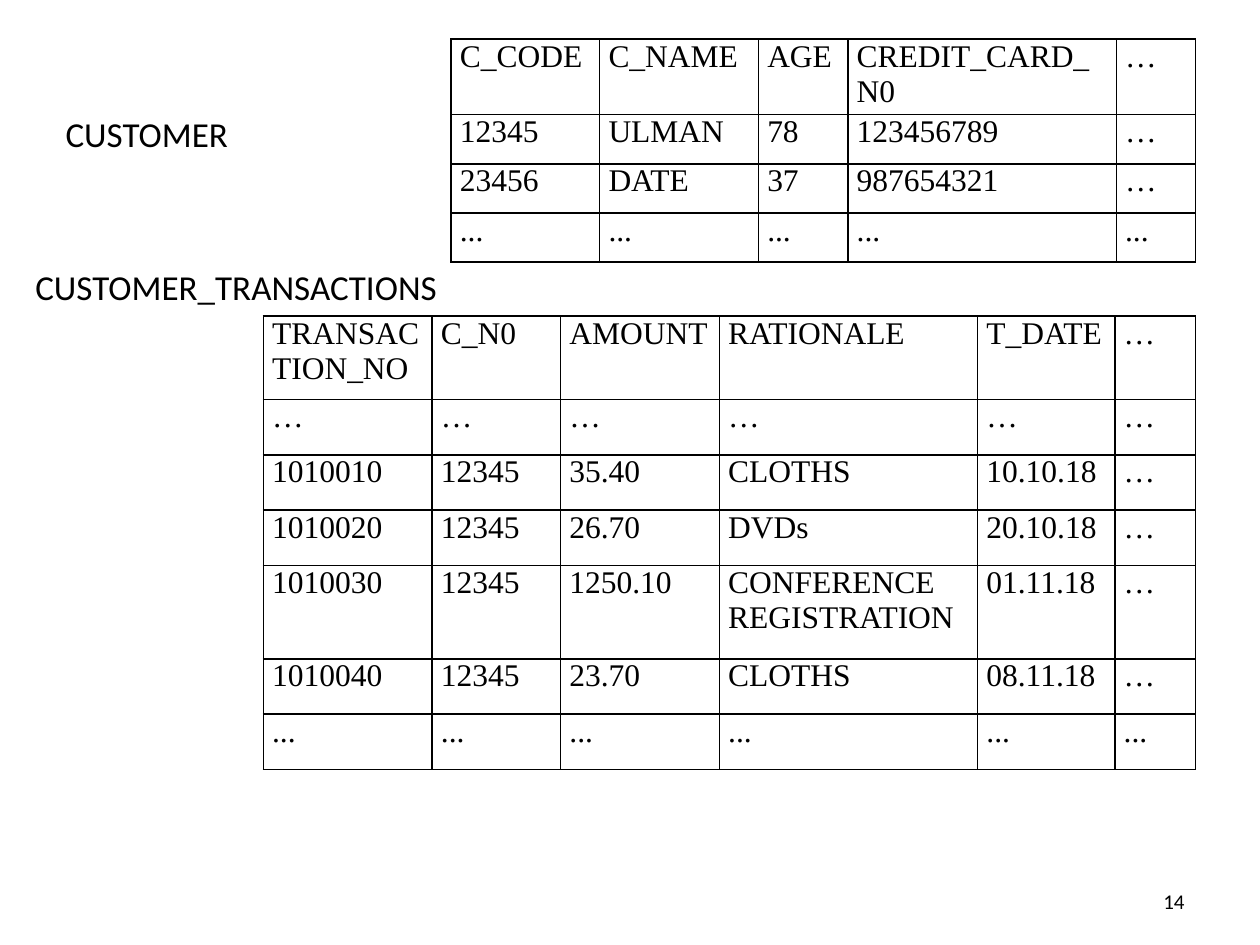
from lxml import etree
from pptx import Presentation
from pptx.dml.color import RGBColor
from pptx.enum.text import MSO_ANCHOR, PP_ALIGN
from pptx.oxml.ns import qn
from pptx.util import Inches, Pt

MIDDLE = MSO_ANCHOR.MIDDLE
LEFT, RIGHT, JUSTIFY = PP_ALIGN.LEFT, PP_ALIGN.RIGHT, PP_ALIGN.JUSTIFY
COLORS = {"text": "000000", "border": "000000"}
BODY, SERIF = "Calibri", "Times New Roman"

CUSTOMERS = [
    ["C_CODE", "C_NAME", "AGE", "CREDIT_CARD_N0", "…"],
    ["12345", "ULMAN", "78", "123456789", "…"],
    ["23456", "DATE", "37", "987654321", "…"],
    ["..."] * 5,
]
TRANSACTIONS = [
    ["TRANSACTION_NO", "C_N0", "AMOUNT", "RATIONALE", "T_DATE", "…"],
    ["…"] * 6,
    ["1010010", "12345", "35.40", "CLOTHS", "10.10.18", "…"],
    ["1010020", "12345", "26.70", "DVDs", "20.10.18", "…"],
    ["1010030", "12345", "1250.10", "CONFERENCE REGISTRATION", "01.11.18", "…"],
    ["1010040", "12345", "23.70", "CLOTHS", "08.11.18", "…"],
    ["..."] * 6,
]


def write_text(tf, text, font=BODY, size=20, align=LEFT):
    """Write one formatted paragraph into a text frame."""
    p = tf.paragraphs[0]
    p.alignment = align
    r = p.add_run()
    r.text = text
    r.font.name = font
    r.font.size = Pt(size)
    r.font.color.rgb = RGBColor.from_string(COLORS["text"])


def add_label(s, box, text, indent=0.1, **fmt):
    """Place a vertically centred text box."""
    tf = s.shapes.add_textbox(*map(Inches, box)).text_frame
    tf.word_wrap = True
    tf.vertical_anchor = MIDDLE
    tf.margin_left = Inches(indent)
    write_text(tf, text, **fmt)


def set_borders(cell):
    """Draw a thin solid line on each side of a cell."""
    tc_pr = cell._tc.get_or_add_tcPr()
    for side in ("a:lnL", "a:lnR", "a:lnT", "a:lnB"):
        ln = etree.SubElement(tc_pr, qn(side), w=str(Pt(1)))
        fill = etree.SubElement(ln, qn("a:solidFill"))
        etree.SubElement(fill, qn("a:srgbClr"), val=COLORS["border"])


def add_grid(s, left, top, widths, heights, rows):
    """Build a bordered table from its column widths and row heights."""
    box = map(Inches, (left, top, sum(widths), sum(heights)))
    table = s.shapes.add_table(len(rows), len(widths), *box).table
    table.first_row = table.horz_banding = False
    for column, width in zip(table.columns, widths):
        column.width = Inches(width)
    for row, height, values in zip(table.rows, heights, rows):
        row.height = Inches(height)
        for cell, value in zip(row.cells, values):
            cell.margin_left = cell.margin_right = Inches(0.07)
            cell.margin_top = cell.margin_bottom = 0
            set_borders(cell)
            cell.fill.background()
            write_text(cell.text_frame, value, font=SERIF, size=18, align=JUSTIFY)


def main():
    """Build the slide with both relations."""
    prs = Presentation()
    prs.slide_width, prs.slide_height = Inches(10), Inches(7.5)
    s = prs.slides.add_slide(prs.slide_layouts[6])
    add_label(s, (7.17, 6.95, 2.33, 0.4), "14", size=12, align=RIGHT)
    add_label(s, (0.28, 0.84, 1.89, 0.44), "CUSTOMER", indent=0.24)
    add_label(s, (0.04, 2.05, 3.7, 0.44), "CUSTOMER_TRANSACTIONS", indent=0.24)
    add_grid(s, 2.09, 2.51, [1.34, 1.02, 1.26, 2.05, 1.09, 0.64],
             [0.66] + [0.44] * 3 + [0.74] + [0.44] * 2, TRANSACTIONS)
    add_grid(s, 3.58, 0.31, [1.18, 1.26, 0.71, 2.13, 0.63],
             [0.6] + [0.39] * 3, CUSTOMERS)
    prs.save("out.pptx")


if __name__ == "__main__":
    main()
